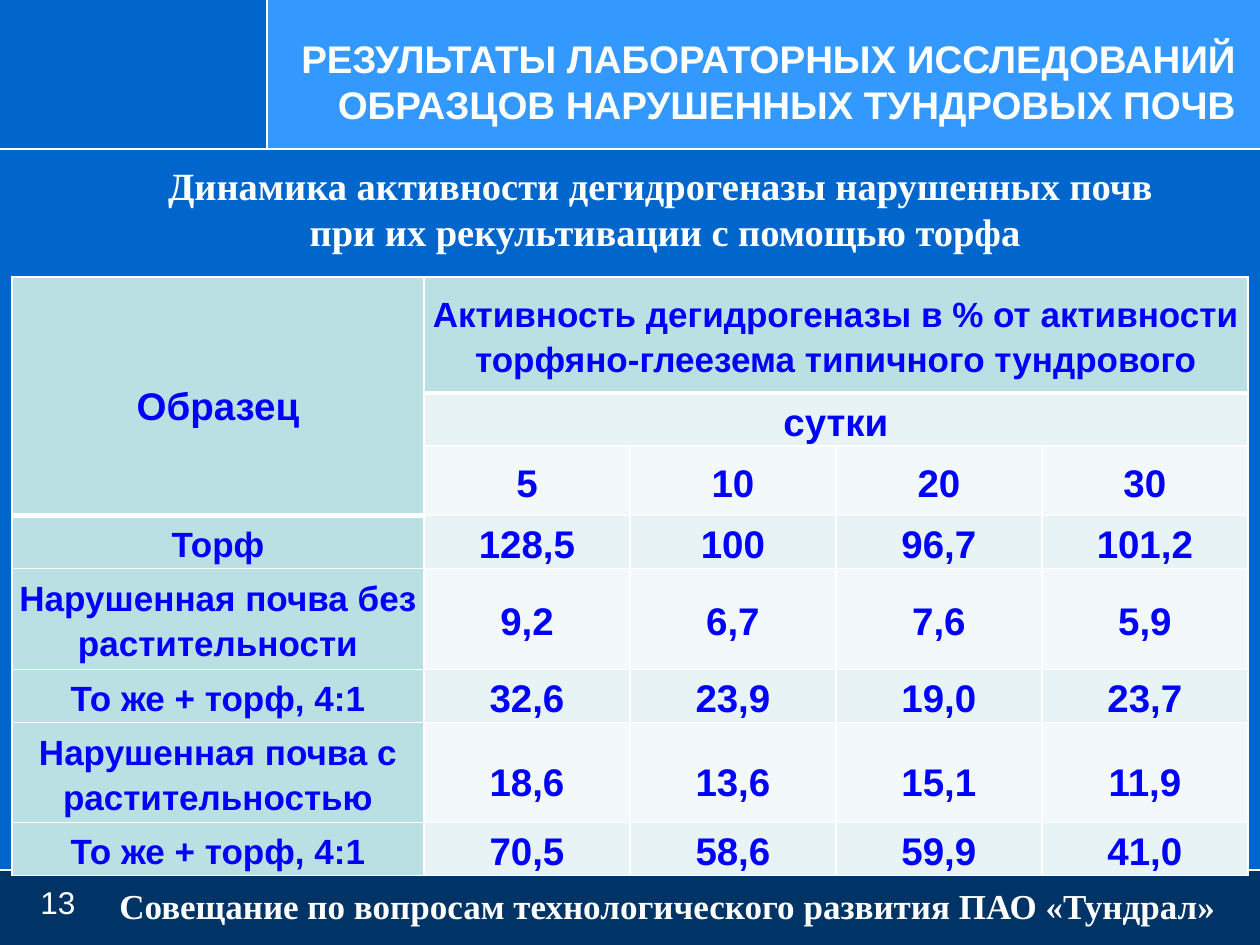
from lxml.etree import SubElement
from pptx import Presentation
from pptx.dml.color import RGBColor
from pptx.enum.shapes import MSO_CONNECTOR, MSO_SHAPE
from pptx.enum.text import MSO_ANCHOR, PP_ALIGN
from pptx.oxml import parse_xml
from pptx.oxml.ns import nsdecls, qn
from pptx.util import Pt

PX = 914400 / 126
WHITE = RGBColor(0xFF, 0xFF, 0xFF)
BLUE = RGBColor(0x00, 0x66, 0xCC)
NAVY = RGBColor(0x00, 0x33, 0x66)
SKY = RGBColor(0x33, 0x99, 0xFF)
INK = RGBColor(0x00, 0x00, 0xFF)
HEAD = RGBColor(0xBB, 0xE0, 0xE3)
BAND = RGBColor(0xE7, 0xF3, 0xF4)
PALE = RGBColor(0xF3, 0xF9, 0xFA)


def scale(*sizes):
    return [int(size * PX) for size in sizes]


def write(frame, lines, align, font, gap=None):
    for i, line in enumerate(lines):
        para = frame.paragraphs[0] if i == 0 else frame.add_paragraph()
        para.alignment = align
        para.line_spacing = gap
        run = para.add_run()
        run.text = line
        run.font.color.rgb = font["color"]
        for key in ("name", "size", "bold"):
            setattr(run.font, key, font[key])


deck = Presentation()
deck.slide_width, deck.slide_height = scale(1260, 945)
slide = deck.slides.add_slide(deck.slide_layouts[6])
shapes = slide.shapes

for box, color in [
    ((0, 0, 1260, 945), BLUE),
    ((0, 869, 1260, 76), NAVY),
    ((0, 0, 267, 149), BLUE),
    ((267, 0, 993, 149), SKY),
]:
    rect = shapes.add_shape(MSO_SHAPE.RECTANGLE, *scale(*box))
    rect.shadow.inherit = False
    rect.fill.solid()
    rect.fill.fore_color.rgb = color
    rect.line.fill.background()

for ends in [(267, 0, 267, 149), (0, 149, 1260, 149), (0, 870, 1260, 870)]:
    rule = shapes.add_connector(MSO_CONNECTOR.STRAIGHT, *scale(*ends))
    rule.line.color.rgb = WHITE
    rule.line.width = Pt(1.25)
    SubElement(rule._element.spPr, qn("a:effectLst"))

sans = {"name": "Arial", "size": Pt(22), "bold": True, "color": WHITE}
serif = {**sans, "name": "Times New Roman"}
TOP, MID = MSO_ANCHOR.TOP, MSO_ANCHOR.MIDDLE
LEFT, MIDST, RIGHT = PP_ALIGN.LEFT, PP_ALIGN.CENTER, PP_ALIGN.RIGHT

for box, lines, align, anchor, font, indent in [
    ((28, 877, 205, 66), ["13"], LEFT, TOP,
     {**sans, "size": Pt(18), "bold": False}, 0),
    ((96, 878, 1143, 44),
     ["Совещание по вопросам технологического развития ПАО «Тундрал»"],
     MIDST, TOP, {**serif, "size": Pt(20)}, 0),
    ((30, 155, 1208, 106),
     ["Динамика активности дегидрогеназы нарушенных почв ",
      "при их рекультивации с помощью торфа"], MIDST, MID, serif, 62),
    ((280, 29, 968, 106),
     ["РЕЗУЛЬТАТЫ ЛАБОРАТОРНЫХ ИССЛЕДОВАНИЙ "
      "ОБРАЗЦОВ НАРУШЕННЫХ ТУНДРОВЫХ ПОЧВ"], RIGHT, TOP, sans, 0),
]:
    frame = shapes.add_textbox(*scale(*box)).text_frame
    frame.word_wrap = True
    frame.vertical_anchor = anchor
    write(frame, lines, align, font)
    if indent:
        for para in frame.paragraphs:
            para._p.get_or_add_pPr().set("indent", str(int(indent * PX)))

rows = [
    ["Образец", "Активность дегидрогеназы в % от активности "
     "торфяно-глеезема типичного тундрового", "", "", ""],
    ["", "сутки", "", "", ""],
    ["", "5", "10", "20", "30"],
    ["Торф", "128,5", "100", "96,7", "101,2"],
    ["Нарушенная почва без растительности", "9,2", "6,7", "7,6", "5,9"],
    ["То же + торф, 4:1", "32,6", "23,9", "19,0", "23,7"],
    ["Нарушенная почва с растительностью", "18,6", "13,6", "15,1", "11,9"],
    ["То же + торф, 4:1", "70,5", "58,6", "59,9", "41,0"],
]
wide = [412] + [206] * 4
high = [116, 50, 64, 50, 101, 50, 100, 50]
place = scale(12, 277, sum(wide), sum(high))
table = shapes.add_table(len(high), len(wide), *place).table
for col, size in zip(table.columns, scale(*wide)):
    col.width = size
for row, size in zip(table.rows, scale(*high)):
    row.height = size

side = int(0.04 * 914400)
inset = {"margin_left": side, "margin_right": side, "margin_top": 0,
         "margin_bottom": 0, "vertical_anchor": MID}
for r, row in enumerate(rows):
    for c, text in enumerate(row):
        cell = table.cell(r, c)
        for key, value in inset.items():
            setattr(cell, key, value)
        head = r == 0 or c == 0
        cell.fill.solid()
        cell.fill.fore_color.rgb = HEAD if head else BAND if r % 2 else PALE
        thick_top = (r == 1 and c > 0) or (r == 3 and c == 0)
        thick_low = r == 0 or (r == 2 and c == 0)
        edges = [("L", 1), ("R", 1), ("T", 3 if thick_top else 1),
                 ("B", 3 if thick_low else 1)]
        for i, (edge, width) in enumerate(edges):
            cell._tc.tcPr.insert(i, parse_xml(
                f'<a:ln{edge} {nsdecls("a")} w="{Pt(width)}"><a:solidFill>'
                f'<a:srgbClr val="{WHITE}"/></a:solidFill></a:ln{edge}>'))
        if text:
            size = Pt(20 if head and text != "Образец" else 22)
            gap = 1.5 if text == "Образец" or (r == 6 and c) else 1.15
            font = {**sans, "size": size, "color": INK}
            write(cell.text_frame, [text], MIDST, font, gap)

for start, end in [((0, 0), (2, 0)), ((0, 1), (0, 4)), ((1, 1), (1, 4))]:
    table.cell(*start).merge(table.cell(*end))

deck.save("out.pptx")
